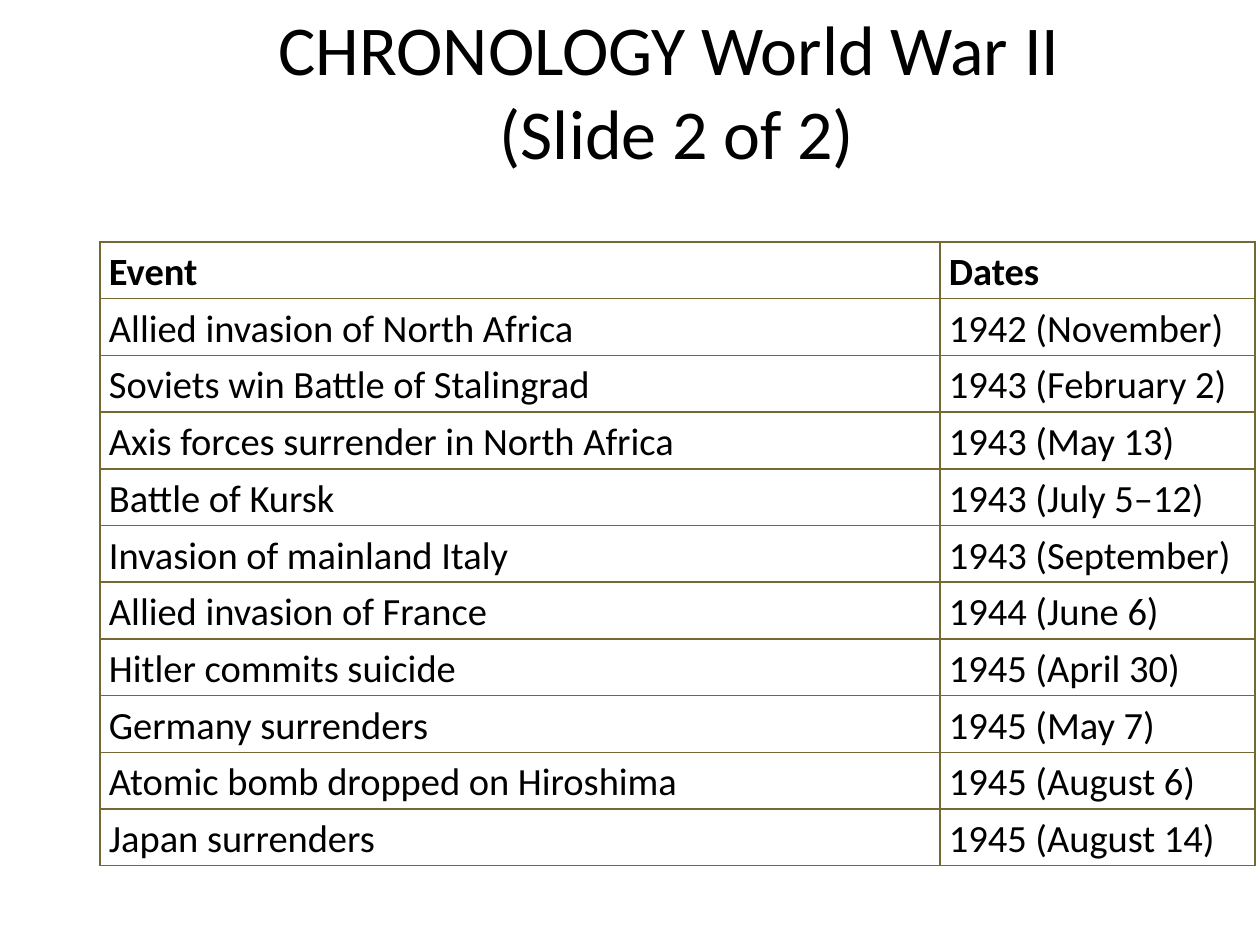
import pptx
import pptx.dml.color
import pptx.enum.text
import pptx.oxml
import pptx.oxml.ns
import pptx.util

COLOURS = {"text": "000000", "border": "746833", "background": "FFFFFF"}
EMU_PER_PX = 914400 / 126

HEADINGS = ("Event", "Dates")
CHRONOLOGY = [
    ("Allied invasion of North Africa", "1942 (November)"),
    ("Soviets win Battle of Stalingrad", "1943 (February 2)"),
    ("Axis forces surrender in North Africa", "1943 (May 13)"),
    ("Battle of Kursk", "1943 (July 5–12)"),
    ("Invasion of mainland Italy", "1943 (September)"),
    ("Allied invasion of France", "1944 (June 6)"),
    ("Hitler commits suicide", "1945 (April 30)"),
    ("Germany surrenders", "1945 (May 7)"),
    ("Atomic bomb dropped on Hiroshima", "1945 (August 6)"),
    ("Japan surrenders", "1945 (August 14)"),
]


def px(length):
    return pptx.util.Emu(round(length * EMU_PER_PX))


def colour(name):
    return pptx.dml.color.RGBColor.from_string(COLOURS[name])


def set_attributes(target, values):
    for name, value in values.items():
        setattr(target, name, value)


class SlideBuilder:
    font_name = "Calibri"
    title_size = 40
    table_size = 22

    def __init__(self, presentation):
        self.slide = presentation.slides.add_slide(presentation.slide_layouts[5])
        background = self.slide.background.fill
        background.solid()
        background.fore_color.rgb = colour("background")

    def style_font(self, font, size, bold=False):
        set_attributes(font, {"name": self.font_name, "size": pptx.util.Pt(size), "bold": bold})
        font.color.rgb = colour("text")

    def title(self, wording, left, top, width, height):
        heading = self.slide.shapes.title
        set_attributes(heading, {"left": px(left), "top": px(top),
                                 "width": px(width), "height": px(height)})
        frame = heading.text_frame
        frame.text = wording
        set_attributes(frame, {"word_wrap": True,
                               "auto_size": pptx.enum.text.MSO_AUTO_SIZE.NONE,
                               "vertical_anchor": pptx.enum.text.MSO_ANCHOR.MIDDLE})
        paragraph = frame.paragraphs[0]
        paragraph.alignment = pptx.enum.text.PP_ALIGN.CENTER
        for run in paragraph.runs:
            self.style_font(run.font, self.title_size)

    def border(self, cell):
        """Draw a thin line on all four sides of a cell."""
        properties = cell._tc.get_or_add_tcPr()
        for position, side in enumerate(("lnL", "lnR", "lnT", "lnB")):
            properties.insert(position, pptx.oxml.parse_xml(
                f'<a:{side} {pptx.oxml.ns.nsdecls("a")} w="{pptx.util.Pt(1)}"><a:solidFill>'
                f'<a:srgbClr val="{COLOURS["border"]}"/></a:solidFill></a:{side}>'))

    def cell(self, cell, wording, bold):
        cell.fill.background()
        self.border(cell)
        set_attributes(cell, {"text": wording, "margin_left": px(9), "margin_right": px(9),
                              "margin_top": 0, "margin_bottom": 0})
        paragraph = cell.text_frame.paragraphs[0]
        paragraph.line_spacing = 1.15
        self.style_font(paragraph.runs[0].font, self.table_size, bold)

    def table(self, rows, left, top, column_widths, height):
        grid = self.slide.shapes.add_table(
            len(rows), len(column_widths), px(left), px(top),
            px(sum(column_widths)), px(height)).table
        grid.horz_banding = False
        for column, width in zip(grid.columns, column_widths):
            column.width = px(width)
        for row_number, row in enumerate(rows):
            grid.rows[row_number].height = px(height / len(rows))
            for column_number, wording in enumerate(row):
                self.cell(grid.cell(row_number, column_number), wording, bold=row_number == 0)


def main():
    presentation = pptx.Presentation()
    set_attributes(presentation, {"slide_width": px(1260), "slide_height": px(945)})
    builder = SlideBuilder(presentation)
    builder.title("CHRONOLOGY World War II \v(Slide 2 of 2)", 94, 63, 1166, 53)
    builder.table([HEADINGS, *CHRONOLOGY], 100, 242, (840, 315), 624)
    presentation.save("out.pptx")


if __name__ == "__main__":
    main()
